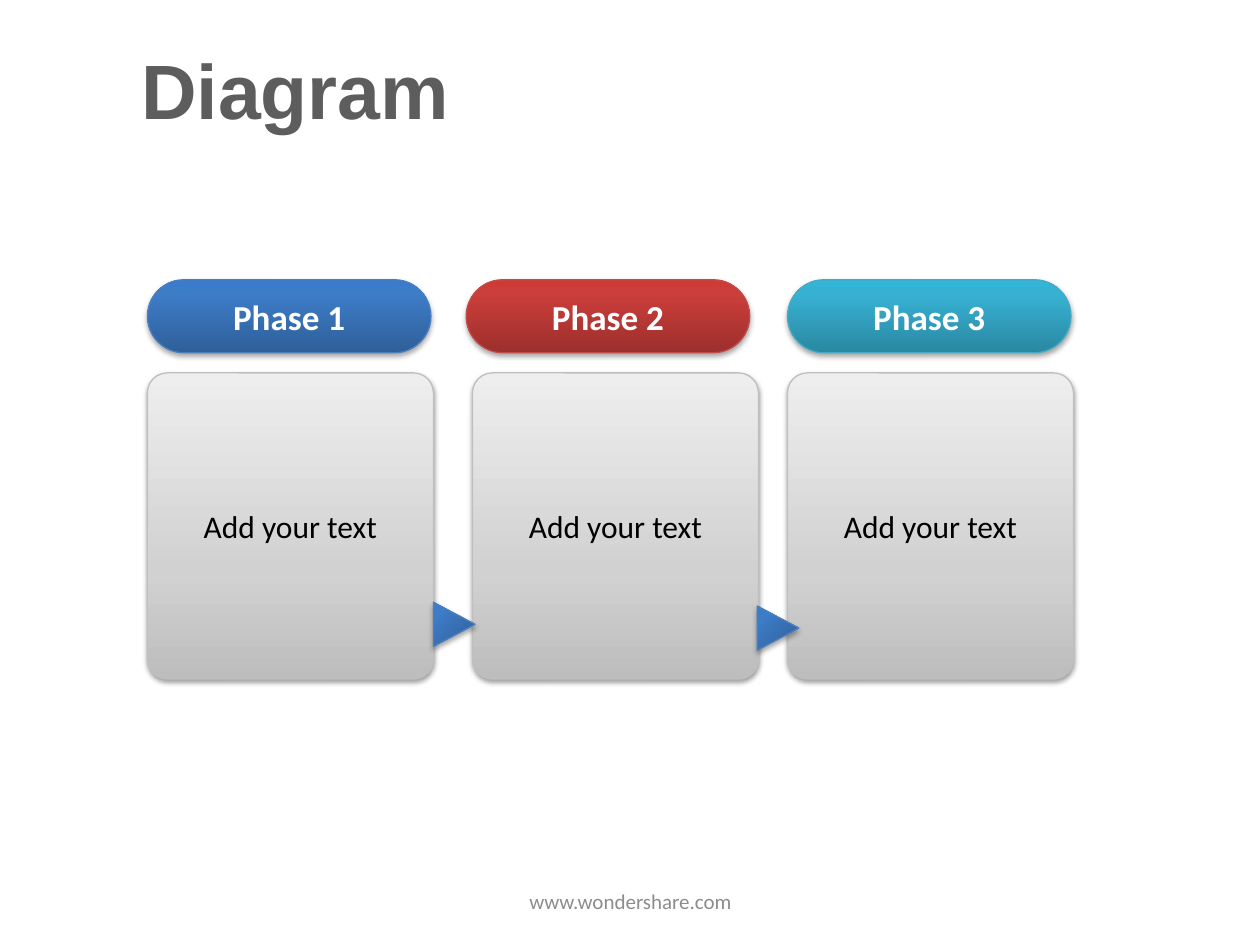
"""Build a three-phase process diagram slide."""
from dataclasses import dataclass

from lxml import etree
from pptx import Presentation
from pptx import util as u
from pptx.dml.color import RGBColor
from pptx.enum import shapes, text
from pptx.oxml import parse_xml
from pptx.oxml.ns import nsdecls, qn


@dataclass(frozen=True)
class Palette:
    """Gradient stops by percent, and the outline that goes with them."""
    stops: tuple
    line: str


@dataclass(frozen=True)
class Theme:
    """Colours, fonts and type sizes of the slide."""
    blue: Palette = Palette(((0, "2F5F99"), (80, "3D7CC7"), (100, "3A7CCB")), "4B7EBC")
    red: Palette = Palette(((0, "9C2F2D"), (80, "CB3E3A"), (100, "CE3B37")), "BF4C48")
    teal: Palette = Palette(((0, "2A88A2"), (80, "37B1D2"), (100, "34B4D6")), "46AAC5")
    grey: Palette = Palette(((0, "BDBDBD"), (35, "D1D1D1"), (100, "EEEEEE")), "BFBFBF")
    title_color: str = "5D5D5D"
    footer_color: str = "8C8C8C"
    light: str = "FFFFFF"
    dark: str = "000000"
    title_font: str = "Arial"
    body_font: str = "Calibri"
    title_size: int = 44
    phase_size: int = 20
    card_size: int = 18
    footer_size: int = 12


class DiagramSlide:
    """Holds the theme and the current slide and draws its elements."""

    def __init__(self, presentation, theme):
        self.theme = theme
        self.slide = presentation.slides.add_slide(presentation.slide_layouts[5])

    def set_text(self, shape, words, size, color, bold=False, font=None,
                 align=text.PP_ALIGN.CENTER, wrap=True):
        """Set and format the single paragraph of a shape."""
        frame = shape.text_frame
        frame.text = words
        frame.word_wrap = wrap
        frame.auto_size = text.MSO_AUTO_SIZE.NONE
        frame.vertical_anchor = text.MSO_ANCHOR.MIDDLE
        paragraph = frame.paragraphs[0]
        paragraph.alignment = align
        run_font = paragraph.runs[0].font
        run_font.name = font or self.theme.body_font
        run_font.size = u.Pt(size)
        run_font.bold = bold
        run_font.color.rgb = RGBColor.from_string(color)

    def block(self, kind, box, palette, angle=270, opacity=35, distance=1.8):
        """Add a shape with a gradient, an outline and a soft shadow."""
        shape = self.slide.shapes.add_shape(kind, *map(u.Inches, box))
        shape.line.color.rgb = RGBColor.from_string(palette.line)
        shape.line.width = u.Pt(0.75)
        shape.fill.gradient()
        shape.shadow.inherit = False
        properties = shape.element.spPr
        stops = "".join(
            f'<a:gs pos="{position * 1000}"><a:srgbClr val="{color}"/></a:gs>'
            for position, color in palette.stops)
        gradient = parse_xml(
            f'<a:gradFill {nsdecls("a")} rotWithShape="1"><a:gsLst>{stops}</a:gsLst>'
            f'<a:lin ang="{angle * 60000}" scaled="0"/></a:gradFill>')
        properties.replace(properties.find(qn("a:gradFill")), gradient)
        shadow = etree.SubElement(
            properties.find(qn("a:effectLst")), qn("a:outerShdw"),
            blurRad=str(u.Pt(3.1)), dist=str(u.Pt(distance)),
            dir="5400000", rotWithShape="0")
        color = etree.SubElement(shadow, qn("a:srgbClr"), val=self.theme.dark)
        etree.SubElement(color, qn("a:alpha"), val=str(opacity * 1000))
        return shape

    def title(self, words):
        """Place and format the title placeholder."""
        shape = self.slide.shapes.title
        shape.left, shape.top = u.Inches(1.02), u.Inches(0.08)
        shape.width, shape.height = u.Inches(4.11), u.Inches(1.25)
        self.set_text(shape, words, self.theme.title_size, self.theme.title_color,
                      True, self.theme.title_font, text.PP_ALIGN.LEFT)

    def phase(self, left, words, palette):
        """Add a pill-shaped phase heading."""
        shape = self.block(shapes.MSO_SHAPE.ROUNDED_RECTANGLE,
                           (left, 2.22, 2.25, 0.58), palette)
        shape.adjustments[0] = 0.5
        self.set_text(shape, words, self.theme.phase_size, self.theme.light, True,
                      wrap=False)

    def card(self, left, words):
        """Add a grey text card."""
        shape = self.block(shapes.MSO_SHAPE.ROUNDED_RECTANGLE,
                           (left, 2.96, 2.27, 2.43), self.theme.grey,
                           opacity=38, distance=1.6)
        shape.adjustments[0] = 0.07
        self.set_text(shape, words, self.theme.card_size, self.theme.dark)

    def pointer(self, left, top):
        """Add a triangle that points to the next card."""
        shape = self.block(shapes.MSO_SHAPE.FLOWCHART_EXTRACT,
                           (left, top, 0.35, 0.33), self.theme.blue, angle=135)
        shape.rotation = 90

    def footer(self, words):
        """Add the centred footer text."""
        shape = self.slide.shapes.add_textbox(
            *map(u.Inches, (3.42, 6.95, 3.17, 0.4)))
        self.set_text(shape, words, self.theme.footer_size, self.theme.footer_color)


def main():
    """Build and save the presentation."""
    presentation = Presentation()
    presentation.slide_width, presentation.slide_height = u.Inches(10), u.Inches(7.5)
    theme = Theme()
    diagram = DiagramSlide(presentation, theme)
    diagram.title("Diagram")
    diagram.footer("www.wondershare.com")
    phases = zip((1.17, 3.7, 6.25), (theme.blue, theme.red, theme.teal))
    for number, (left, palette) in enumerate(phases, 1):
        diagram.phase(left, f"Phase {number}", palette)
    for left in (1.17, 3.75, 6.25):
        diagram.card(left, "Add your text")
    for left, top in ((3.43, 4.79), (6, 4.82)):
        diagram.pointer(left, top)
    presentation.save("out.pptx")


if __name__ == "__main__":
    main()
